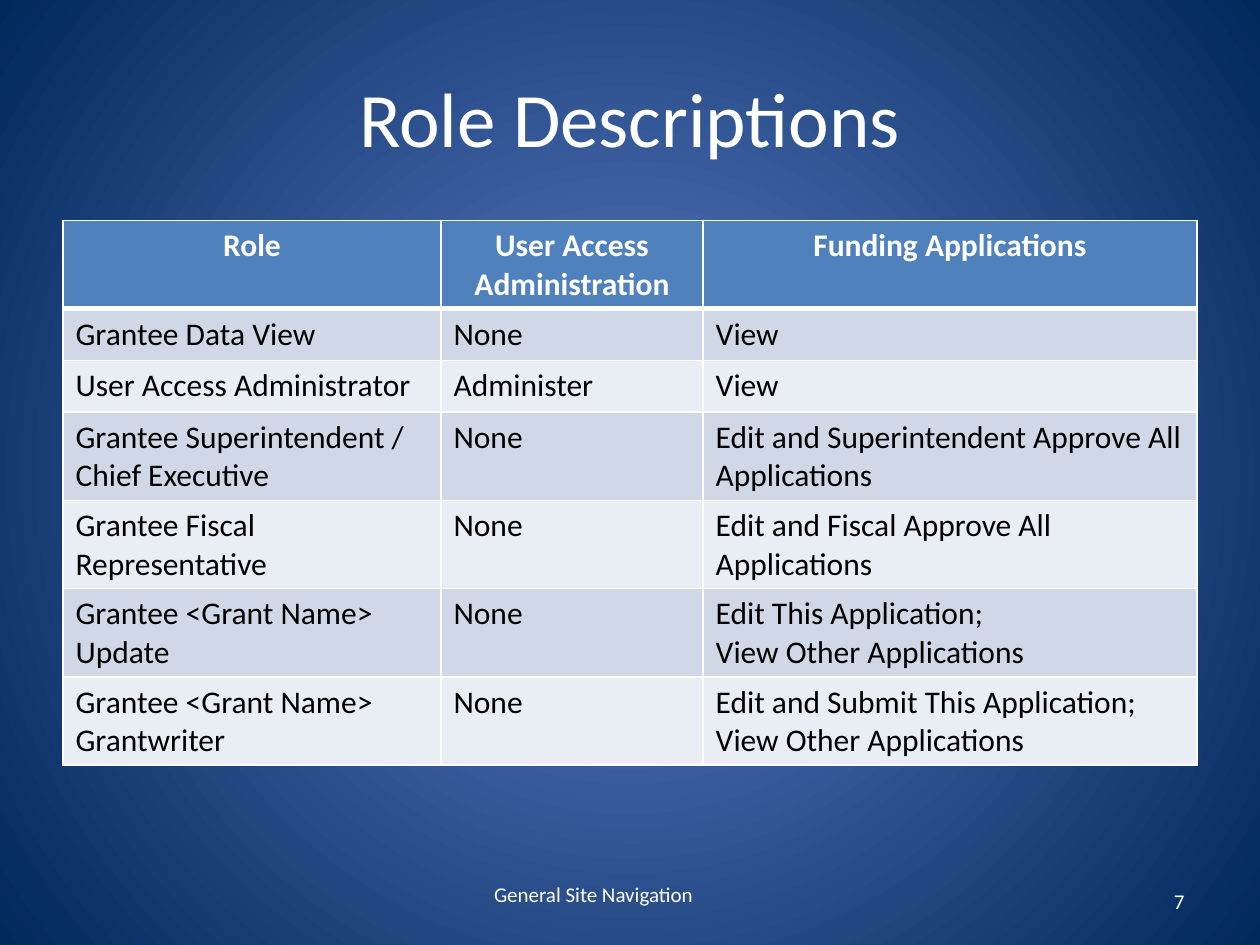
from dataclasses import dataclass

from lxml import etree
from pptx import Presentation
from pptx import util as u
from pptx.dml.color import RGBColor
from pptx.enum import text
from pptx.oxml import ns


@dataclass(frozen=True)
class Theme:
    font: str = "Calibri"
    white: str = "FFFFFF"
    black: str = "000000"
    glow: str = "5E7CC5"
    navy: str = "00295C"
    header: str = "4F81BD"
    bands: tuple = ("D0D8E8", "E9EDF4")
    title_size: int = 44
    table_size: int = 18
    footer_size: int = 12
    border: int = 1
    header_border: int = 3


HEADINGS = ("Role", "User Access Administration", "Funding Applications")
ROLES = (
    ("Grantee Data View", "None", "View"),
    ("User Access Administrator", "Administer", "View"),
    ("Grantee Superintendent / Chief Executive", "None",
     "Edit and Superintendent Approve All Applications"),
    ("Grantee Fiscal Representative", "None",
     "Edit and Fiscal Approve All Applications"),
    ("Grantee <Grant Name> Update", "None",
     "Edit This Application;\nView Other Applications"),
    ("Grantee <Grant Name> Grantwriter", "None",
     "Edit and Submit This Application;\nView Other Applications"),
)
COLUMN_WIDTHS = (3, 2.08, 3.92)
ROW_HEIGHT = 0.41


def write(frame, content, *, font, size, color, bold=False, align=text.PP_ALIGN.LEFT):
    frame.word_wrap = True
    frame.text = content
    for paragraph in frame.paragraphs:
        paragraph.alignment = align
        for run in paragraph.runs:
            run.font.name = font
            run.font.size = u.Pt(size)
            run.font.bold = bold
            run.font.color.rgb = RGBColor.from_string(color)


class SlideBuilder:
    def __init__(self, slide, theme):
        self.slide = slide
        self.theme = theme

    def background(self):
        fill = self.slide.background.fill
        fill.gradient()
        for stop, color in zip(fill.gradient_stops, (self.theme.glow, self.theme.navy)):
            stop.color.rgb = RGBColor.from_string(color)
        gradient = self.slide.element.find(".//" + ns.qn("a:gradFill"))
        gradient.remove(gradient.find(ns.qn("a:lin")))
        circle = etree.SubElement(gradient, ns.qn("a:path"), path="circle")
        center = dict.fromkeys("ltrb", "50000")
        etree.SubElement(circle, ns.qn("a:fillToRect"), center)

    def textbox(self, content, box, size, align, anchor=text.MSO_ANCHOR.TOP):
        shape = self.slide.shapes.add_textbox(*map(u.Inches, box))
        shape.text_frame.vertical_anchor = anchor
        write(shape.text_frame, content, font=self.theme.font, size=size,
              color=self.theme.white, align=align)

    def borders(self, cell, top, bottom):
        properties = cell._tc.get_or_add_tcPr()
        widths = {"L": self.theme.border, "R": self.theme.border, "T": top, "B": bottom}
        for side, width in widths.items():
            line = etree.SubElement(properties, ns.qn("a:ln" + side), w=str(u.Pt(width)))
            fill = etree.SubElement(line, ns.qn("a:solidFill"))
            etree.SubElement(fill, ns.qn("a:srgbClr"), val=self.theme.white)

    def table(self, rows, left, top):
        theme = self.theme
        table = self.slide.shapes.add_table(
            len(rows), len(COLUMN_WIDTHS), u.Inches(left), u.Inches(top),
            u.Inches(sum(COLUMN_WIDTHS)), u.Inches(ROW_HEIGHT * len(rows))).table
        for column, width in zip(table.columns, COLUMN_WIDTHS):
            column.width = u.Inches(width)
        for index, values in enumerate(rows):
            table.rows[index].height = u.Inches(ROW_HEIGHT)
            header = index == 0
            fill = theme.header if header else theme.bands[(index - 1) % 2]
            for cell, value in zip(table.rows[index].cells, values):
                self.borders(
                    cell,
                    top=theme.header_border if index == 1 else theme.border,
                    bottom=theme.header_border if header else theme.border)
                cell.fill.solid()
                cell.fill.fore_color.rgb = RGBColor.from_string(fill)
                write(cell.text_frame, value, font=theme.font, size=theme.table_size,
                      color=theme.white if header else theme.black, bold=header,
                      align=text.PP_ALIGN.CENTER if header else text.PP_ALIGN.LEFT)


def main():
    presentation = Presentation()
    presentation.slide_width = u.Inches(10)
    presentation.slide_height = u.Inches(7.5)
    theme = Theme()
    builder = SlideBuilder(
        presentation.slides.add_slide(presentation.slide_layouts[6]), theme)
    builder.background()
    builder.textbox("Role Descriptions", (0.5, 0.3, 9, 1.25), theme.title_size,
                    text.PP_ALIGN.CENTER, text.MSO_ANCHOR.MIDDLE)
    builder.table((HEADINGS, *ROLES), 0.5, 1.75)
    builder.textbox("7", (7.17, 6.95, 2.33, 0.4), theme.footer_size,
                    text.PP_ALIGN.RIGHT, text.MSO_ANCHOR.MIDDLE)
    builder.textbox("General Site Navigation", (3.75, 6.95, 1.92, 0.4),
                    theme.footer_size, text.PP_ALIGN.CENTER)
    presentation.save("out.pptx")


if __name__ == "__main__":
    main()
